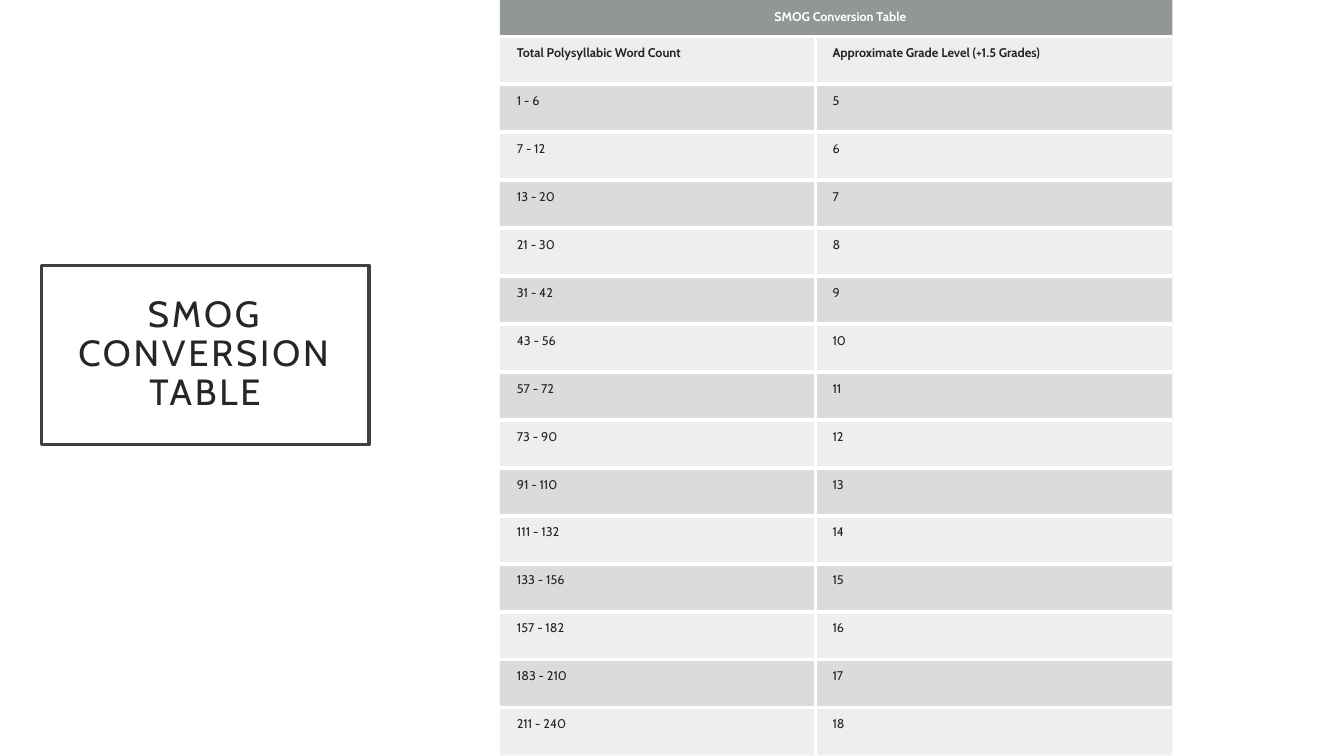
from dataclasses import dataclass

from lxml.etree import SubElement
from pptx import Presentation
from pptx.dml.color import RGBColor
from pptx.dml.fill import FillFormat
from pptx.enum.text import MSO_ANCHOR, MSO_AUTO_SIZE, PP_ALIGN
from pptx.oxml.ns import qn
from pptx.shapes.autoshape import Shape
from pptx.slide import Slide
from pptx.table import Table, _Cell
from pptx.text.text import _Paragraph
from pptx.util import Pt

FONT = "Cabin"
INK = "262626"
WHITE = "FFFFFF"
GREY = "878E8B"
HEADER_HEIGHT = 26
ROW_HEIGHT = 34.25
COLUMN_WIDTHS = (225.5, 255)


@dataclass(frozen=True)
class RowStyle:
    fill: str
    opacity: int
    ink: str = INK
    bold: bool = False
    align: PP_ALIGN = PP_ALIGN.LEFT


@dataclass(frozen=True)
class GradeRow:
    words: str
    grade: str
    style: RowStyle


HEADER = RowStyle("636B68", 70, WHITE, True, PP_ALIGN.CENTER)
LABELS = RowStyle(GREY, 15, bold=True)
BANDS = (RowStyle(GREY, 30), RowStyle(GREY, 15))
FIRST_GRADE = 5
WORD_COUNTS = (
    "1 - 6", "7 - 12", "13 - 20", "21 - 30", "31 - 42", "43 - 56", "57 - 72",
    "73 - 90", "91 - 110", "111 - 132", "133 - 156", "157 - 182", "183 - 210",
    "211 - 240",
)
ROWS = [
    GradeRow("SMOG Conversion Table", "", HEADER),
    GradeRow("Total Polysyllabic Word Count", "Approximate Grade Level (+1.5 Grades)", LABELS),
] + [
    GradeRow(words, str(FIRST_GRADE + index), BANDS[index % 2])
    for index, words in enumerate(WORD_COUNTS)
]


def color(code: str) -> RGBColor:
    return RGBColor.from_string(code)


def paint(fill: FillFormat, code: str) -> None:
    fill.solid()
    fill.fore_color.rgb = color(code)


def format_text(para: _Paragraph, size: float, ink: str, bold: bool, align: PP_ALIGN) -> None:
    para.alignment = align
    for span in para.runs:
        span.font.name = FONT
        span.font.size = Pt(size)
        span.font.bold = bold
        span.font.color.rgb = color(ink)


def add_border(cell: _Cell, side: str, visible: bool) -> None:
    line = SubElement(cell._tc.get_or_add_tcPr(), qn(f"a:ln{side}"), w=str(Pt(3)))
    if visible:
        SubElement(SubElement(line, qn("a:solidFill")), qn("a:srgbClr"), val=WHITE)
    else:
        SubElement(line, qn("a:noFill"))


def format_cell(cell: _Cell, text: str, style: RowStyle, inner_sides: dict[str, bool]) -> None:
    cell.text_frame.text = text
    format_text(cell.text_frame.paragraphs[0], 9, style.ink, style.bold, style.align)
    cell.margin_left = Pt(12.2)
    cell.margin_right = cell.margin_top = cell.margin_bottom = Pt(6.5)
    for side, visible in inner_sides.items():
        add_border(cell, side, visible)
    paint(cell.fill, style.fill)
    shade = next(cell._tc.tcPr.iterchildren(qn("a:solidFill")))[0]
    SubElement(shade, qn("a:alpha"), val=str(style.opacity * 1000))


def fill_table(table: Table) -> None:
    table.first_row = table.horz_banding = False
    for column, width in zip(table.columns, COLUMN_WIDTHS):
        column.width = Pt(width)
    for index, row in enumerate(ROWS):
        table.rows[index].height = Pt(ROW_HEIGHT if index else HEADER_HEIGHT)
        for position, text in enumerate((row.words, row.grade)):
            inner_sides = {
                "L": index > 0 and position == 1,
                "R": index > 0 and position == 0,
                "T": index > 0,
                "B": index < len(ROWS) - 1,
            }
            format_cell(table.cell(index, position), text, row.style, inner_sides)
    table.cell(0, 0).merge(table.cell(0, 1))


def format_title(box: Shape) -> None:
    box.left, box.top, box.width, box.height = Pt(29.5), Pt(189.5), Pt(234), Pt(128)
    paint(box.fill, WHITE)
    paint(box.line.fill, "404040")
    box.line.width = Pt(2.5)
    frame = box.text_frame
    frame.text = "SMOG CONVERSION TABLE"
    frame.word_wrap = True
    frame.auto_size = MSO_AUTO_SIZE.NONE
    frame.vertical_anchor = MSO_ANCHOR.MIDDLE
    frame.margin_left = frame.margin_right = Pt(21.6)
    frame.margin_top = frame.margin_bottom = Pt(14.4)
    para = frame.paragraphs[0]
    para.line_spacing = 0.9
    format_text(para, 26, INK, False, PP_ALIGN.CENTER)
    for span in para.runs:
        span.font._element.set("spc", "200")


def build_page(page: Slide) -> None:
    format_title(page.shapes.title)
    height = HEADER_HEIGHT + ROW_HEIGHT * (len(ROWS) - 1)
    frame = page.shapes.add_table(
        len(ROWS), len(COLUMN_WIDTHS), Pt(357), Pt(0), Pt(sum(COLUMN_WIDTHS)), Pt(height)
    )
    fill_table(frame.table)


def main() -> None:
    deck = Presentation()
    deck.slide_width, deck.slide_height = Pt(960), Pt(540)
    build_page(deck.slides.add_slide(deck.slide_layouts.get_by_name("Title Only")))
    deck.save("out.pptx")


if __name__ == "__main__":
    main()
